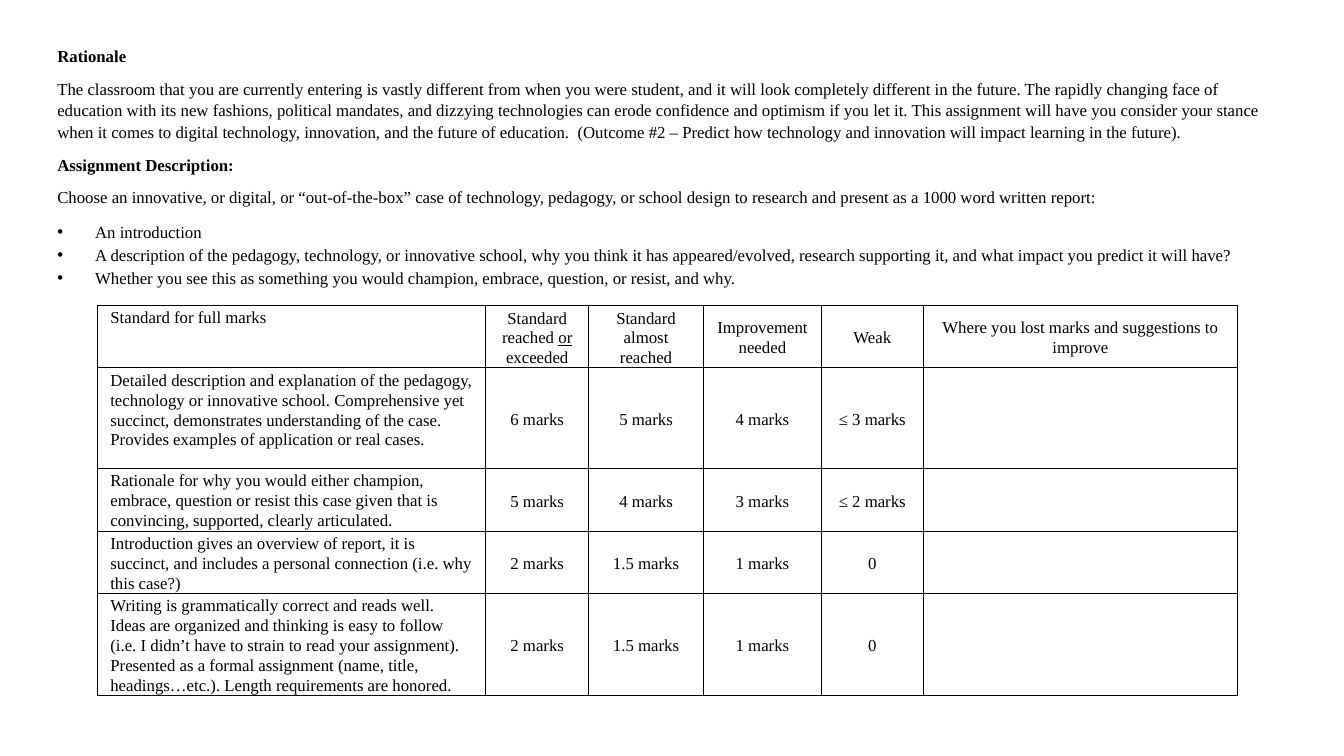
from dataclasses import dataclass

import lxml.etree
import pptx
import pptx.dml.color
import pptx.enum.text
import pptx.oxml.ns
import pptx.util

Pt = pptx.util.Pt
ALIGN = pptx.enum.text.PP_ALIGN
ANCHOR = pptx.enum.text.MSO_ANCHOR
COLORS = {"ink": "000000"}
FONT = "Times New Roman"
BULLET_INDENT = Pt(27)


@dataclass
class Line:
    text: str
    bold: bool = False
    bullet: bool = False
    spacing: float = 1.07
    after: float = 8


INTRO = [
    Line("Rationale", bold=True),
    Line("The classroom that you are currently entering is vastly different from when you were student, "
         "and it will look completely different in the future. The rapidly changing face of education with "
         "its new fashions, political mandates, and dizzying technologies can erode confidence and optimism "
         "if you let it. This assignment will have you consider your stance when it comes to digital "
         "technology, innovation, and the future of education.  (Outcome #2 – Predict how technology and "
         "innovation will impact learning in the future)."),
    Line("Assignment Description:", bold=True),
    Line("Choose an innovative, or digital, or “out-of-the-box” case of technology, pedagogy, or school "
         "design to research and present as a 1000 word written report:"),
    Line("An introduction", bullet=True, spacing=1.15, after=0),
    Line("A description of the pedagogy, technology, or innovative school, why you think it has "
         "appeared/evolved, research supporting it, and what impact you predict it will have?",
         bullet=True, spacing=1.15, after=0),
    Line("Whether you see this as something you would champion, embrace, question, or resist, and why.",
         bullet=True, spacing=1.15, after=10),
]

COLUMN_WIDTHS = [277.2, 73.44, 82.08, 84.24, 72.72, 224.64]
ROW_HEIGHTS = [44.64, 72, 44.64, 44.64, 72]
UNDERLINED = "or"
RUBRIC = [
    ["Standard for full marks", "Standard reached or exceeded", "Standard almost reached",
     "Improvement needed", "Weak", "Where you lost marks and suggestions to improve"],
    ["Detailed description and explanation of the pedagogy, technology or innovative school. "
     "Comprehensive yet succinct, demonstrates understanding of the case. Provides examples of "
     "application or real cases.", "6 marks", "5 marks", "4 marks", "≤ 3 marks", ""],
    ["Rationale for why you would either champion, embrace, question or resist this case given that "
     "is convincing, supported, clearly articulated.", "5 marks", "4 marks", "3 marks", "≤ 2 marks", ""],
    ["Introduction gives an overview of report, it is succinct, and includes a personal connection "
     "(i.e. why this case?)", "2 marks", "1.5 marks", "1 marks", "0", ""],
    ["Writing is grammatically correct and reads well. Ideas are organized and thinking is easy to "
     "follow (i.e. I didn’t have to strain to read your assignment). Presented as a formal assignment "
     "(name, title, headings…etc.). Length requirements are honored.",
     "2 marks", "1.5 marks", "1 marks", "0", ""],
]


def add_text(para, text: str, *, bold: bool = False, underline: bool = False) -> None:
    span = para.add_run()
    span.text = text
    span.font.name = FONT
    span.font.size = Pt(12)
    span.font.bold = bold
    span.font.underline = underline
    span.font.color.rgb = pptx.dml.color.RGBColor.from_string(COLORS["ink"])


def add_bullet(para) -> None:
    properties = para._p.get_or_add_pPr()
    properties.set("marL", str(BULLET_INDENT))
    properties.set("indent", str(-BULLET_INDENT))
    bullet_font = lxml.etree.SubElement(properties, pptx.oxml.ns.qn("a:buFont"))
    bullet_font.set("typeface", "Arial")
    bullet = lxml.etree.SubElement(properties, pptx.oxml.ns.qn("a:buChar"))
    bullet.set("char", "•")


def add_intro(page) -> None:
    box = page.shapes.add_textbox(Pt(33.84), Pt(28.08), Pt(886.32), Pt(181.44))
    frame = box.text_frame
    frame.word_wrap = True
    frame.auto_size = pptx.enum.text.MSO_AUTO_SIZE.SHAPE_TO_FIT_TEXT
    for index, line in enumerate(INTRO):
        para = frame.add_paragraph() if index else frame.paragraphs[0]
        if line.bullet:
            add_bullet(para)
        para.line_spacing = line.spacing
        para.space_after = Pt(line.after)
        add_text(para, line.text, bold=line.bold)


def add_borders(cell) -> None:
    properties = cell._tc.get_or_add_tcPr()
    for side in ("lnL", "lnR", "lnT", "lnB"):
        border = lxml.etree.SubElement(properties, pptx.oxml.ns.qn(f"a:{side}"), w=str(Pt(1)))
        fill = lxml.etree.SubElement(border, pptx.oxml.ns.qn("a:solidFill"))
        lxml.etree.SubElement(fill, pptx.oxml.ns.qn("a:srgbClr"), val=COLORS["ink"])


def fill_cell(cell, text: str, *, centred: bool) -> None:
    add_borders(cell)
    cell.fill.background()
    cell.margin_left = cell.margin_right = Pt(9)
    cell.margin_top, cell.margin_bottom = Pt(1.5), Pt(0)
    cell.vertical_anchor = ANCHOR.MIDDLE if centred else ANCHOR.TOP
    if not text:
        return
    para = cell.text_frame.paragraphs[0]
    para.alignment = ALIGN.CENTER if centred else ALIGN.LEFT
    para.line_spacing = 1.07
    para.space_after = Pt(8)
    before, mark, after = text.partition(f" {UNDERLINED} ")
    if centred and mark:
        add_text(para, before + " ")
        add_text(para, UNDERLINED, underline=True)
        add_text(para, " " + after)
    else:
        add_text(para, text)


def add_rubric(page) -> None:
    frame = page.shapes.add_table(len(RUBRIC), len(COLUMN_WIDTHS), Pt(69.84), Pt(218.16),
                                  Pt(sum(COLUMN_WIDTHS)), Pt(sum(ROW_HEIGHTS)))
    table = frame.table
    table.first_row = table.horz_banding = False
    for column, width in zip(table.columns, COLUMN_WIDTHS):
        column.width = Pt(width)
    for row, height, texts in zip(table.rows, ROW_HEIGHTS, RUBRIC):
        row.height = Pt(height)
        for index, (cell, text) in enumerate(zip(row.cells, texts)):
            fill_cell(cell, text, centred=index > 0)


def main() -> None:
    deck = pptx.Presentation()
    deck.slide_width, deck.slide_height = Pt(960), Pt(540)
    page = deck.slides.add_slide(deck.slide_layouts[6])
    add_rubric(page)
    add_intro(page)
    deck.save("out.pptx")


if __name__ == "__main__":
    main()
